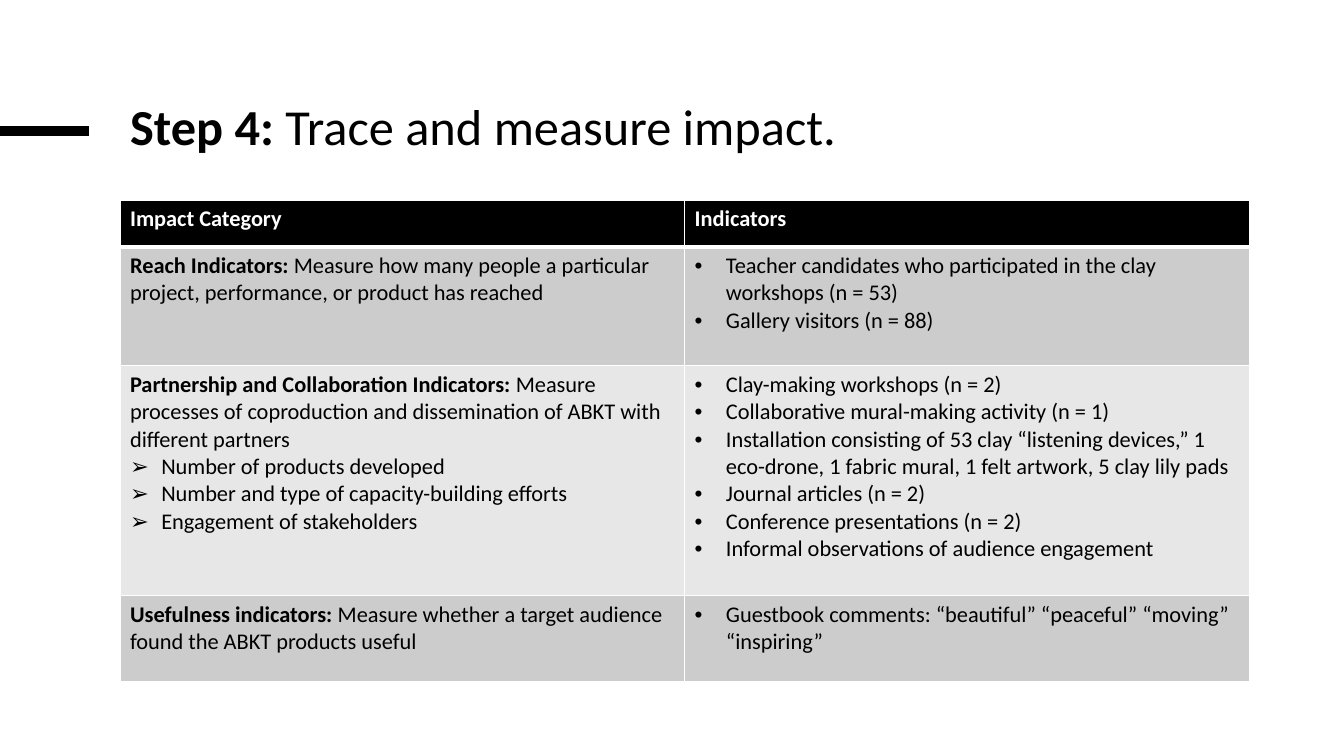
from dataclasses import dataclass

from lxml.etree import SubElement
from pptx import Presentation
from pptx.dml.color import RGBColor
from pptx.enum.shapes import MSO_CONNECTOR
from pptx.enum.text import MSO_ANCHOR, PP_ALIGN
from pptx.oxml import parse_xml
from pptx.oxml.ns import nsdecls, qn
from pptx.util import Inches, Pt


@dataclass(frozen=True)
class Theme:
    font: str = "Calibri"
    ink: str = "000000"
    paper: str = "FFFFFF"
    bands: tuple = ("CCCCCC", "E7E7E7")
    title_size: int = 36
    body_size: int = 16
    accent_width: float = 6.75
    grid_width: float = 1
    header_rule_width: float = 3


THEME = Theme()
HEADINGS = ("Impact Category", "Indicators")
ROW_HEIGHTS = (0.46, 1.18, 2.28, 0.85)
IMPACTS = (
    (
        "Reach Indicators: ",
        "Measure how many people a particular project, performance, or product has reached",
        (),
        (
            "Teacher candidates who participated in the clay workshops (n = 53)",
            "Gallery visitors (n = 88)",
        ),
    ),
    (
        "Partnership and Collaboration Indicators: ",
        "Measure processes of coproduction and dissemination of ABKT with different partners",
        (
            "Number of products developed",
            "Number and type of capacity-building efforts",
            "Engagement of stakeholders",
        ),
        (
            "Clay-making workshops (n = 2)",
            "Collaborative mural-making activity (n = 1)",
            "Installation consisting of 53 clay “listening devices,” 1 eco-drone, "
            "1 fabric mural, 1 felt artwork, 5 clay lily pads",
            "Journal articles (n = 2)",
            "Conference presentations (n = 2)",
            "Informal observations of audience engagement",
        ),
    ),
    (
        "Usefulness indicators: ",
        "Measure whether a target audience found the ABKT products useful",
        (),
        ("Guestbook comments: “beautiful” “peaceful” “moving” “inspiring”",),
    ),
)


def add_span(para, text, size, color=THEME.ink, bold=False):
    span = para.add_run()
    span.text = text
    span.font.name = THEME.font
    span.font.size = Pt(size)
    span.font.bold = bold
    span.font.color.rgb = RGBColor.from_string(color)


def add_bullet(para, text, mark):
    properties = para._p.get_or_add_pPr()
    properties.set("marL", str(Inches(0.31)))
    properties.set("indent", str(-Inches(0.31)))
    SubElement(properties, qn("a:buFont"), typeface="Arial")
    SubElement(properties, qn("a:buChar"), char=mark)
    add_span(para, text, THEME.body_size)


def fill_cell(cell, color, top_width, bottom_width):
    cell.fill.solid()
    cell.fill.fore_color.rgb = RGBColor.from_string(color)
    widths = (THEME.grid_width, THEME.grid_width, top_width, bottom_width)
    for index, (side, width) in enumerate(zip("LRTB", widths)):
        border = parse_xml(
            f'<a:ln{side} {nsdecls("a")} w="{Pt(width)}"><a:solidFill>'
            f'<a:srgbClr val="{THEME.paper}"/></a:solidFill></a:ln{side}>'
        )
        cell._tc.get_or_add_tcPr().insert(index, border)


def add_title(page, left, top, width, height):
    title = page.shapes.title
    title.left, title.top = Inches(left), Inches(top)
    title.width, title.height = Inches(width), Inches(height)
    title.text_frame.word_wrap = True
    title.text_frame.vertical_anchor = MSO_ANCHOR.TOP
    para = title.text_frame.paragraphs[0]
    para.alignment = PP_ALIGN.LEFT
    para.line_spacing = 0.85
    add_span(para, "Step 4: ", THEME.title_size, bold=True)
    add_span(para, "Trace and measure impact.", THEME.title_size)


def add_accent(page, left, top, width):
    accent = page.shapes.add_connector(
        MSO_CONNECTOR.STRAIGHT,
        Inches(left), Inches(top), Inches(left + width), Inches(top),
    )
    accent.line.color.rgb = RGBColor.from_string(THEME.ink)
    accent.line.width = Pt(THEME.accent_width)
    SubElement(accent._element.spPr, qn("a:effectLst"))


def add_impact_table(page, left, top, width, height):
    table = page.shapes.add_table(
        len(ROW_HEIGHTS), len(HEADINGS),
        Inches(left), Inches(top), Inches(width), Inches(height),
    ).table
    for row, row_height in zip(table.rows, ROW_HEIGHTS):
        row.height = Inches(row_height)

    for cell, heading in zip(table.rows[0].cells, HEADINGS):
        fill_cell(cell, THEME.ink, THEME.grid_width, THEME.header_rule_width)
        para = cell.text_frame.paragraphs[0]
        add_span(para, heading, THEME.body_size, THEME.paper, bold=True)

    for index, (name, meaning, measures, indicators) in enumerate(IMPACTS):
        category, evidence = table.rows[index + 1].cells
        top_width = THEME.grid_width if index else THEME.header_rule_width
        for cell in (category, evidence):
            band = THEME.bands[index % len(THEME.bands)]
            fill_cell(cell, band, top_width, THEME.grid_width)

        para = category.text_frame.paragraphs[0]
        add_span(para, name, THEME.body_size, bold=True)
        add_span(para, meaning, THEME.body_size)
        for measure in measures:
            add_bullet(category.text_frame.add_paragraph(), measure, "➢")

        frame = evidence.text_frame
        for number, indicator in enumerate(indicators):
            para = frame.add_paragraph() if number else frame.paragraphs[0]
            add_bullet(para, indicator, "•")


def main():
    deck = Presentation()
    deck.slide_width = Inches(13.33)
    deck.slide_height = Inches(7.5)
    page = deck.slides.add_slide(deck.slide_layouts[5])
    add_accent(page, 0, 1.3, 0.88)
    add_title(page, 1.19, 0.99, 10.85, 1.42)
    add_impact_table(page, 1.19, 1.99, 11.2, sum(ROW_HEIGHTS))
    deck.save("out.pptx")


if __name__ == "__main__":
    main()
